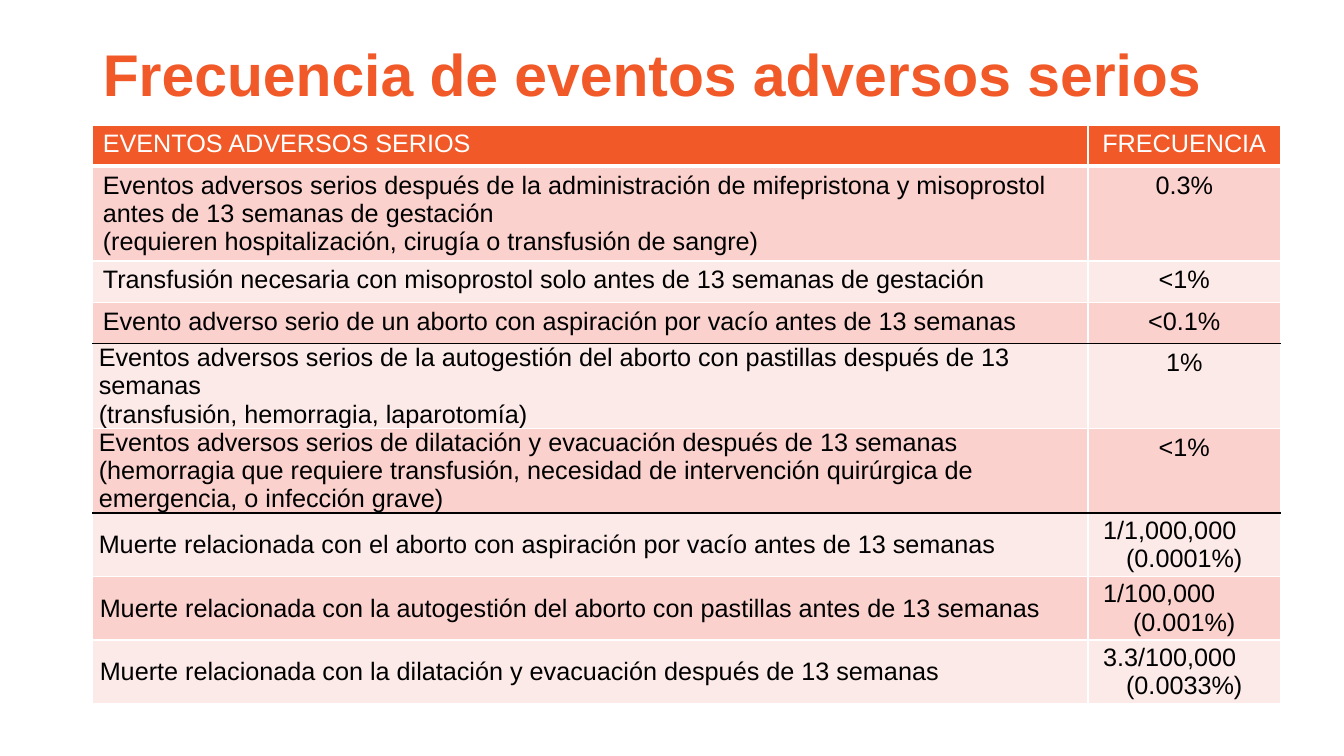
from lxml import etree
from pptx import Presentation
from pptx.dml.color import RGBColor
from pptx.enum.text import MSO_ANCHOR, MSO_AUTO_SIZE, PP_ALIGN
from pptx.oxml.ns import qn
from pptx.util import Inches, Pt

TOP, MIDDLE = MSO_ANCHOR.TOP, MSO_ANCHOR.MIDDLE
LEFT, CENTER = PP_ALIGN.LEFT, PP_ALIGN.CENTER
NO_FIT = MSO_AUTO_SIZE.NONE

ORANGE = RGBColor(0xF1, 0x59, 0x28)
ROSE = RGBColor(0xFA, 0xD1, 0xCD)
PALE = RGBColor(0xFC, 0xEA, 0xE8)
WHITE = RGBColor(0xFF, 0xFF, 0xFF)
BLACK = RGBColor(0, 0, 0)

FONT = "Arial"
TITLE_ONLY = 5
WIDTH, HEIGHT = 13.33, 7.5
TITLE_BOX = (0.92, 0.4, 11.5, 1.45)
TABLE_BOX = (0.92, 1.24, 11.78, 5.92)
EVENT_SHARE = 0.838

ROOMY = (0.1, 0.05, TOP)
TIGHT = (0.06, 0, MIDDLE)
SNUG = (0.07, 0, MIDDLE)
FRACTION_START = 0.15
THIN_WHITE, THICK_WHITE, THIN_BLACK = (WHITE, 1), (WHITE, 3), (BLACK, 1)

EVENTS = [
    (0.41, ROOMY, ROOMY, THICK_WHITE, ["EVENTOS ADVERSOS SERIOS"], ["FRECUENCIA"]),
    (0.73, ROOMY, ROOMY, THIN_WHITE,
     ["Eventos adversos serios después de la administración de mifepristona y "
      "misoprostol antes de 13 semanas de gestación",
      "(requieren hospitalización, cirugía o transfusión de sangre)"], ["0.3%"]),
    (0.41, ROOMY, ROOMY, THIN_WHITE,
     ["Transfusión necesaria con misoprostol solo antes de 13 semanas de gestación"],
     ["<1%"]),
    (0.41, ROOMY, ROOMY, THIN_BLACK,
     ["Evento adverso serio de un aborto con aspiración por vacío antes de 13 semanas"],
     ["<0.1%"]),
    (0.63, TIGHT, ROOMY, THIN_WHITE,
     ["Eventos adversos serios de la autogestión del aborto con pastillas después "
      "de 13 semanas",
      "(transfusión, hemorragia, laparotomía)"], ["1%"]),
    (0.82, TIGHT, ROOMY, THIN_BLACK,
     ["Eventos adversos serios de dilatación y evacuación después de 13 semanas "
      "(hemorragia que requiere transfusión, necesidad de intervención quirúrgica "
      "de emergencia, o infección grave)"], ["<1%"]),
    (0.63, TIGHT, TIGHT, THIN_WHITE,
     ["Muerte relacionada con el aborto con aspiración por vacío antes de 13 semanas"],
     ["1/1,000,000", "(0.0001%)"]),
    (0.63, SNUG, SNUG, THIN_WHITE,
     ["Muerte relacionada con la autogestión del aborto con pastillas antes de 13 semanas"],
     ["1/100,000", "(0.001%)"]),
    (0.63, SNUG, SNUG, THIN_WHITE,
     ["Muerte relacionada con la dilatación y evacuación después de 13 semanas"],
     ["3.3/100,000", "(0.0033%)"]),
]


def add_span(para, text, size, color, bold=False):
    span = para.add_run()
    span.text = text
    span.font.name = FONT
    span.font.size = Pt(size)
    span.font.bold = bold
    span.font.color.rgb = color


def draw_title(page, box):
    title = page.shapes.title
    title.left, title.top, title.width, title.height = map(Inches, box)
    frame = title.text_frame
    frame.word_wrap = True
    frame.auto_size = NO_FIT
    frame.vertical_anchor = TOP
    para = frame.paragraphs[0]
    para.alignment = LEFT
    para.line_spacing = 0.9
    add_span(para, "Frecuencia de eventos adversos serios", 42, ORANGE, True)


def set_borders(cell, above, below):
    properties = cell._tc.get_or_add_tcPr()
    sides = {"a:lnL": THIN_WHITE, "a:lnR": THIN_WHITE, "a:lnT": above, "a:lnB": below}
    for side, (color, points) in sides.items():
        line = etree.SubElement(properties, qn(side), w=str(Pt(points)))
        fill = etree.SubElement(line, qn("a:solidFill"))
        etree.SubElement(fill, qn("a:srgbClr"), val=str(color))


def fill_cell(cell, lines, layout, alignment, fill, color):
    side, edge, anchor = layout
    cell.margin_left = cell.margin_right = Inches(side)
    cell.margin_top = cell.margin_bottom = Inches(edge)
    cell.vertical_anchor = anchor
    cell.fill.solid()
    cell.fill.fore_color.rgb = fill
    frame = cell.text_frame
    for index, text in enumerate(lines):
        para = frame.add_paragraph() if index else frame.paragraphs[0]
        para.alignment = alignment
        add_span(para, text, 18, color)
    if alignment == CENTER and len(lines) > 1:
        fraction = frame.paragraphs[0]
        fraction.alignment = LEFT
        fraction._p.get_or_add_pPr().set("marL", str(Inches(FRACTION_START - side)))


def draw_events(page, box):
    left, top, width, height = map(Inches, box)
    holder = page.shapes.add_table(len(EVENTS), 2, left, top, width, height)
    table = holder.table
    table.columns[0].width = int(width * EVENT_SHARE)
    table.columns[1].width = width - table.columns[0].width
    above = THIN_WHITE
    for index, event in enumerate(EVENTS):
        row_height, event_layout, rate_layout, below, names, rates = event
        table.rows[index].height = Inches(row_height)
        fill = (ROSE if index % 2 else PALE) if index else ORANGE
        color = BLACK if index else WHITE
        parts = [(names, event_layout, LEFT), (rates, rate_layout, CENTER)]
        for column, (lines, layout, alignment) in enumerate(parts):
            cell = table.cell(index, column)
            set_borders(cell, above, below)
            fill_cell(cell, lines, layout, alignment, fill, color)
        above = below
    holder.height = height


def main():
    deck = Presentation()
    deck.slide_width, deck.slide_height = Inches(WIDTH), Inches(HEIGHT)
    page = deck.slides.add_slide(deck.slide_layouts[TITLE_ONLY])
    draw_title(page, TITLE_BOX)
    draw_events(page, TABLE_BOX)
    deck.save("out.pptx")


if __name__ == "__main__":
    main()
